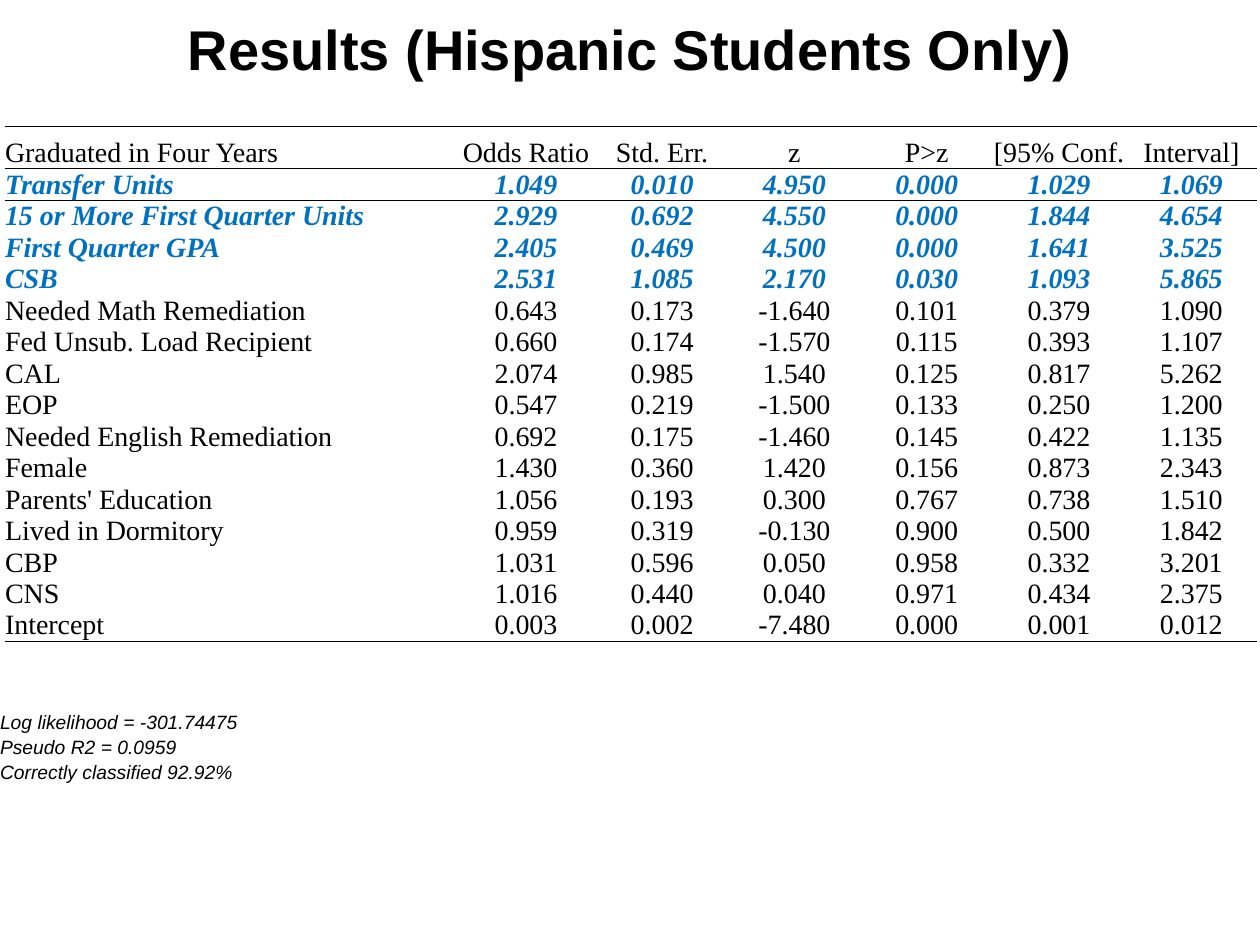
from dataclasses import dataclass

from lxml import etree
from pptx import Presentation
from pptx.dml.color import RGBColor
from pptx.enum.text import MSO_ANCHOR, PP_ALIGN
from pptx.oxml.ns import qn
from pptx.util import Inches, Pt

CENTER, LEFT = PP_ALIGN.CENTER, PP_ALIGN.LEFT
MIDDLE, BOTTOM = MSO_ANCHOR.MIDDLE, MSO_ANCHOR.BOTTOM
TITLE_ONLY = 5
PLAIN_TABLE_STYLE = "{2D5ABB26-0587-4C30-8999-92F81FD0307C}"
RULE_WIDTH = Pt(0.5)
COLORS = {"text": "000000", "significant": "0070C0"}


@dataclass(frozen=True)
class TextStyle:
    font: str
    size: float
    color: str = "text"
    bold: bool = False
    italic: bool = False


TITLE_STYLE = TextStyle("Arial", 32, bold=True)
FIT_STYLE = TextStyle("Arial", 11, italic=True)
BODY_STYLE = TextStyle("Times New Roman", 16)
SIGNIFICANT_STYLE = TextStyle("Times New Roman", 16, "significant", True, True)

FIT_STATISTICS = [
    ["Log likelihood = -301.74475"],
    ["Pseudo R2 = 0.0959"],
    ["Correctly classified 92.92%"],
]
SIGNIFICANT_ROWS = range(1, 5)
REGRESSION = [
    ["Graduated in Four Years", "Odds Ratio", "Std. Err.", "z", "P>z", "[95% Conf.", "Interval]"],
    ["Transfer Units", "1.049", "0.010", "4.950", "0.000", "1.029", "1.069"],
    ["15 or More First Quarter Units", "2.929", "0.692", "4.550", "0.000", "1.844", "4.654"],
    ["First Quarter GPA", "2.405", "0.469", "4.500", "0.000", "1.641", "3.525"],
    ["CSB", "2.531", "1.085", "2.170", "0.030", "1.093", "5.865"],
    ["Needed Math Remediation", "0.643", "0.173", "-1.640", "0.101", "0.379", "1.090"],
    ["Fed Unsub. Load Recipient", "0.660", "0.174", "-1.570", "0.115", "0.393", "1.107"],
    ["CAL", "2.074", "0.985", "1.540", "0.125", "0.817", "5.262"],
    ["EOP", "0.547", "0.219", "-1.500", "0.133", "0.250", "1.200"],
    ["Needed English Remediation", "0.692", "0.175", "-1.460", "0.145", "0.422", "1.135"],
    ["Female", "1.430", "0.360", "1.420", "0.156", "0.873", "2.343"],
    ["Parents' Education", "1.056", "0.193", "0.300", "0.767", "0.738", "1.510"],
    ["Lived in Dormitory", "0.959", "0.319", "-0.130", "0.900", "0.500", "1.842"],
    ["CBP", "1.031", "0.596", "0.050", "0.958", "0.332", "3.201"],
    ["CNS", "1.016", "0.440", "0.040", "0.971", "0.434", "2.375"],
    ["Intercept", "0.003", "0.002", "-7.480", "0.000", "0.001", "0.012"],
]


def format_paragraph(paragraph, style: TextStyle, alignment) -> None:
    paragraph.alignment = alignment
    font = paragraph.font
    font.name = style.font
    font.size = Pt(style.size)
    font.bold = style.bold
    font.italic = style.italic
    font.color.rgb = RGBColor.from_string(COLORS[style.color])


def add_rule(cell, side: str) -> None:
    """Draw a thin border on the side lnT (top) or lnB (bottom)."""
    properties = cell._tc.get_or_add_tcPr()
    line = etree.SubElement(properties, qn(f"a:{side}"), w=str(RULE_WIDTH))
    fill = etree.SubElement(line, qn("a:solidFill"))
    etree.SubElement(fill, qn("a:srgbClr"), val=COLORS["text"])


def add_plain_table(slide, left: float, top: float, rows: list[list[str]],
                    widths: list[float], heights: list[float],
                    styles: list[TextStyle]):
    """Add an unfilled table with labels at left and centred values."""
    shape = slide.shapes.add_table(len(rows), len(widths), Inches(left), Inches(top),
                                   Inches(sum(widths)), Inches(sum(heights)))
    table = shape.table
    table.first_row = table.horz_banding = False
    table._tbl.tblPr.find(qn("a:tableStyleId")).text = PLAIN_TABLE_STYLE
    for column, width in zip(table.columns, widths):
        column.width = Inches(width)
    for row, height, texts, style in zip(table.rows, heights, rows, styles):
        row.height = Inches(height)
        for index, (cell, text) in enumerate(zip(row.cells, texts)):
            cell.text = text
            cell.margin_left = cell.margin_right = 0
            cell.margin_top = cell.margin_bottom = 0
            cell.vertical_anchor = BOTTOM
            cell.fill.background()
            format_paragraph(cell.text_frame.paragraphs[0], style,
                             CENTER if index else LEFT)
    return table


def add_row_rules(table, row_index: int, *sides: str) -> None:
    for cell in table.rows[row_index].cells:
        for side in sides:
            add_rule(cell, side)
        cell.fill.background()  # keeps the fill after the borders, as the schema asks


def add_title(slide, text: str) -> None:
    title = slide.shapes.title
    title.left, title.top = Inches(0.04), Inches(0.03)
    title.width, title.height = Inches(9.92), Inches(0.7)
    title.text_frame.text = text
    title.text_frame.vertical_anchor = MIDDLE
    format_paragraph(title.text_frame.paragraphs[0], TITLE_STYLE, CENTER)


def main() -> None:
    presentation = Presentation()
    presentation.slide_width, presentation.slide_height = Inches(10), Inches(7.5)
    slide = presentation.slides.add_slide(presentation.slide_layouts[TITLE_ONLY])
    add_title(slide, "Results (Hispanic Students Only)")

    add_plain_table(slide, 0, 5.62, FIT_STATISTICS, [2.24], [0.2] * 3, [FIT_STYLE] * 3)

    styles = [SIGNIFICANT_STYLE if index in SIGNIFICANT_ROWS else BODY_STYLE
              for index in range(len(REGRESSION))]
    regression = add_plain_table(slide, 0.04, 1, REGRESSION, [3.58, 1.11] + [1.05] * 5,
                                 [0.34] + [0.25] * 13 + [0.23, 0.25], styles)
    add_row_rules(regression, 0, "lnT", "lnB")
    add_row_rules(regression, 1, "lnT")
    add_row_rules(regression, len(REGRESSION) - 1, "lnB")

    presentation.save("out.pptx")


if __name__ == "__main__":
    main()
